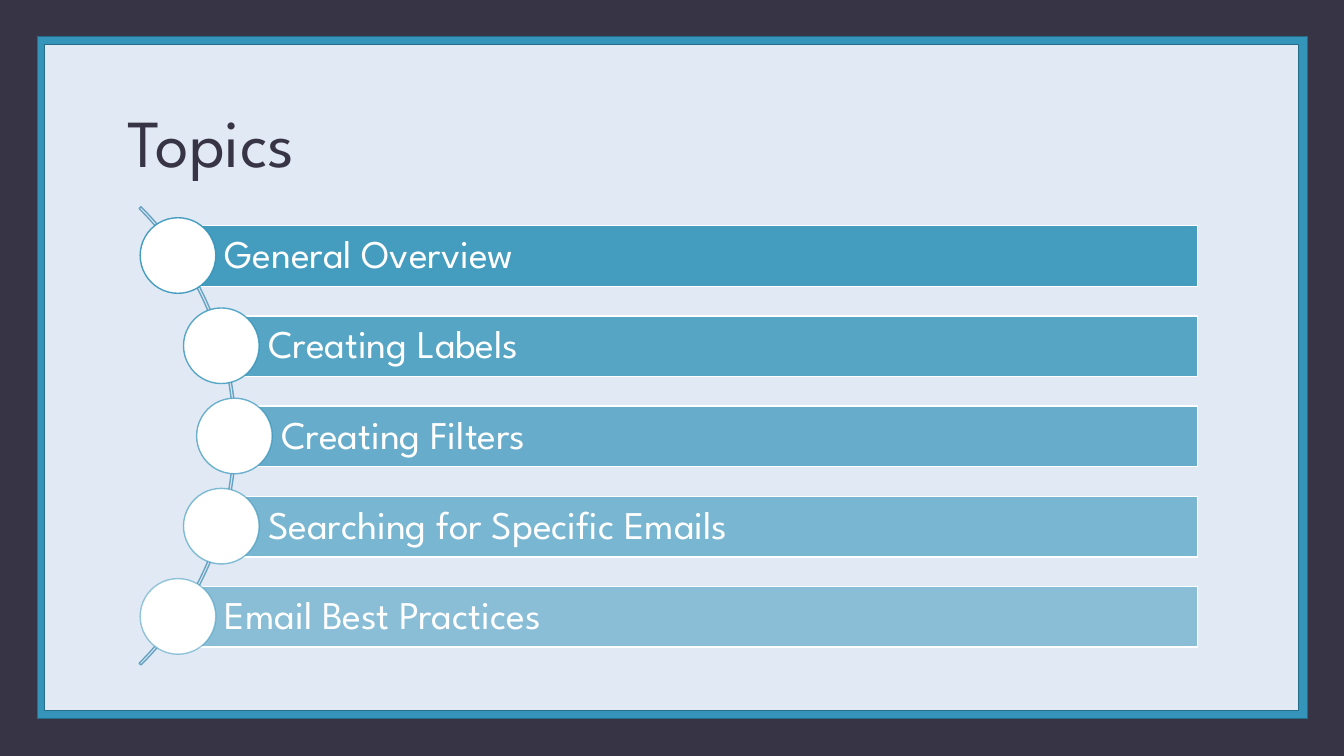
import pptx
import pptx.dml.color
import pptx.enum.shapes
import pptx.enum.text
import pptx.oxml.ns
import pptx.util
from lxml import etree

Inches = pptx.util.Inches
Pt = pptx.util.Pt
RGB = pptx.dml.color.RGBColor.from_string
SHAPE = pptx.enum.shapes.MSO_SHAPE
MIDDLE = pptx.enum.text.MSO_ANCHOR.MIDDLE

THEME = {
    "font": "League Spartan",
    "dark": RGB("373545"),
    "accent": RGB("3494BA"),
    "accent_dark": RGB("266D8A"),
    "arc": RGB("67A3C2"),
    "panel": RGB("E1E9F5"),
    "white": RGB("FFFFFF"),
    "title_size": Pt(48),
    "topic_size": Pt(28),
    "line_width": Pt(1),
}

deck = pptx.Presentation()
deck.slide_width = Inches(13.33)
deck.slide_height = Inches(7.5)
slide = deck.slides.add_slide(deck.slide_layouts[6])
slide.background.fill.solid()
slide.background.fill.fore_color.rgb = THEME["dark"]


def draw(geometry, box, fill, line, fill_opacity=100, line_opacity=100):
    part = slide.shapes.add_shape(geometry, *map(Inches, box))
    part.shadow.inherit = False
    part.line.width = THEME["line_width"]
    for paint, color, opacity in (
        (part.fill, fill, fill_opacity),
        (part.line.fill, line, line_opacity),
    ):
        if color is None:
            paint.background()
            continue
        paint.solid()
        paint.fore_color.rgb = THEME[color]
        if opacity < 100:
            solid = part._element.spPr.find(
                ".//a:ln/a:solidFill/a:srgbClr" if paint is not part.fill else "a:solidFill/a:srgbClr",
                {"a": pptx.oxml.ns.nsdecls("a").split('"')[1]},
            )
            etree.SubElement(solid, pptx.oxml.ns.qn("a:alpha"), val=str(opacity * 1000))
    return part


def write(holder, text, size, color, left_inset, inset):
    frame = holder.text_frame
    paragraph = frame.paragraphs[0]
    run = paragraph.add_run()
    run.text = text
    run.font.color.rgb = THEME[color]
    formats = {
        frame: {
            "word_wrap": True,
            "vertical_anchor": MIDDLE,
            "margin_left": Inches(left_inset),
            "margin_right": Inches(inset),
            "margin_top": Inches(inset),
            "margin_bottom": Inches(inset),
        },
        paragraph: {"alignment": pptx.enum.text.PP_ALIGN.LEFT, "line_spacing": 0.9},
        run.font: {"name": THEME["font"], "size": THEME[size]},
    }
    for target, values in formats.items():
        for attribute, value in values.items():
            setattr(target, attribute, value)


draw(SHAPE.RECTANGLE, (0.37, 0.36, 12.6, 6.77), "accent", "accent_dark")
draw(SHAPE.RECTANGLE, (0.44, 0.44, 12.44, 6.61), "panel", "accent_dark")

title = slide.shapes.add_textbox(Inches(1.17), Inches(0.7), Inches(11), Inches(1.5))
write(title, "Topics", "title_size", "dark", 0.1, 0.05)

arc = draw(SHAPE.BLOCK_ARC, (-4.09, 1.11, 6.43, 6.43), None, "arc")
for index, value in enumerate((189, 27, 0.004)):
    arc.adjustments[index] = value

topics = [
    ("General Overview", 1.76),
    ("Creating Labels", 2.19),
    ("Creating Filters", 2.32),
    ("Searching for Specific Emails", 2.19),
    ("Email Best Practices", 1.76),
]
bar_right = 11.88
first_top = 2.24
topic_pitch = 0.895

for index, (topic, bar_left) in enumerate(topics):
    top = first_top + index * topic_pitch
    opacity = 90 - 10 * index
    bar = draw(
        SHAPE.RECTANGLE, (bar_left, top, bar_right - bar_left, 0.6),
        "accent", "white", fill_opacity=opacity,
    )
    write(bar, topic, "topic_size", "white", 0.47, 0.08)
    draw(
        SHAPE.OVAL, (bar_left - 0.37, top - 0.08, 0.75, 0.75),
        "white", "accent", line_opacity=opacity,
    )

deck.save("out.pptx")
